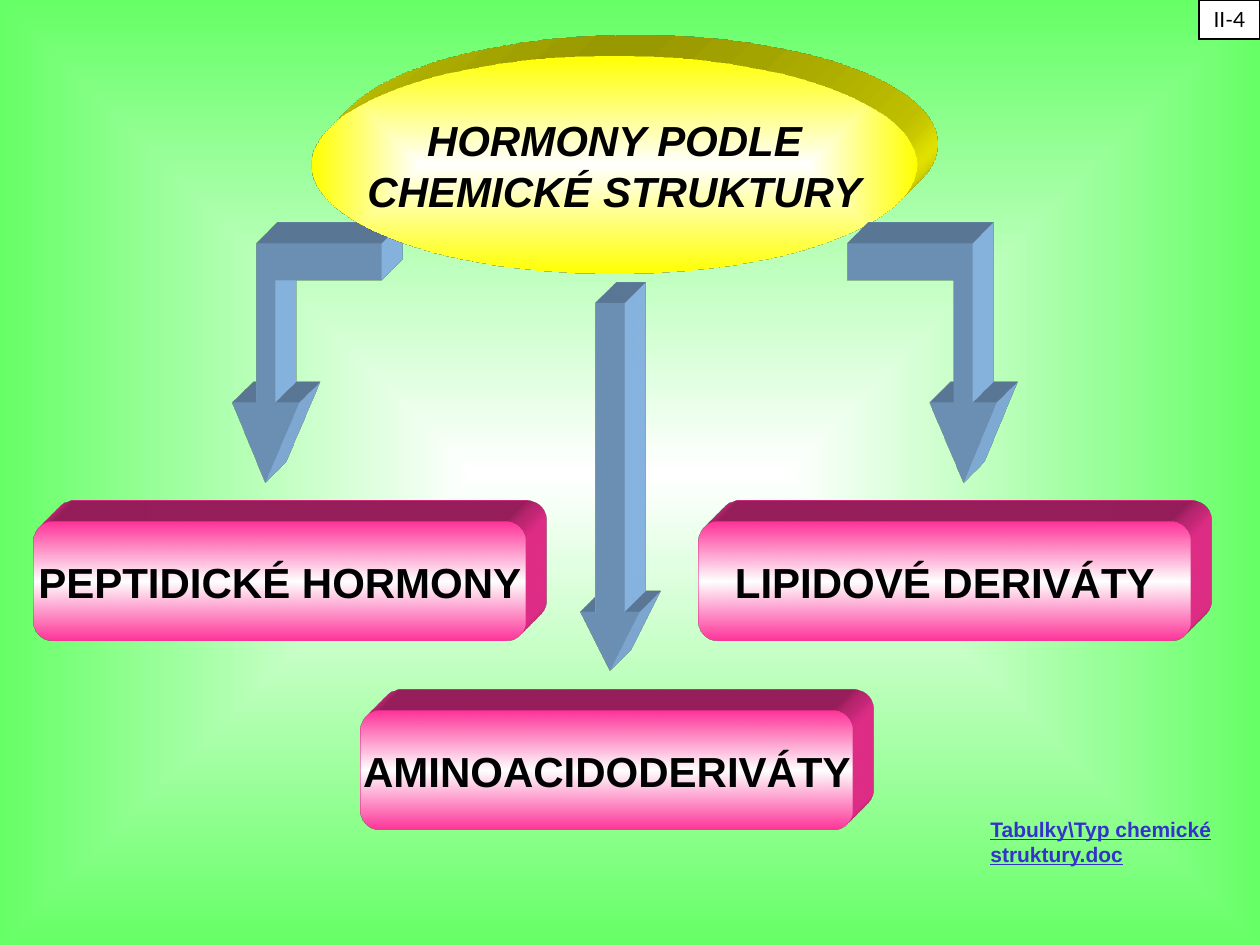
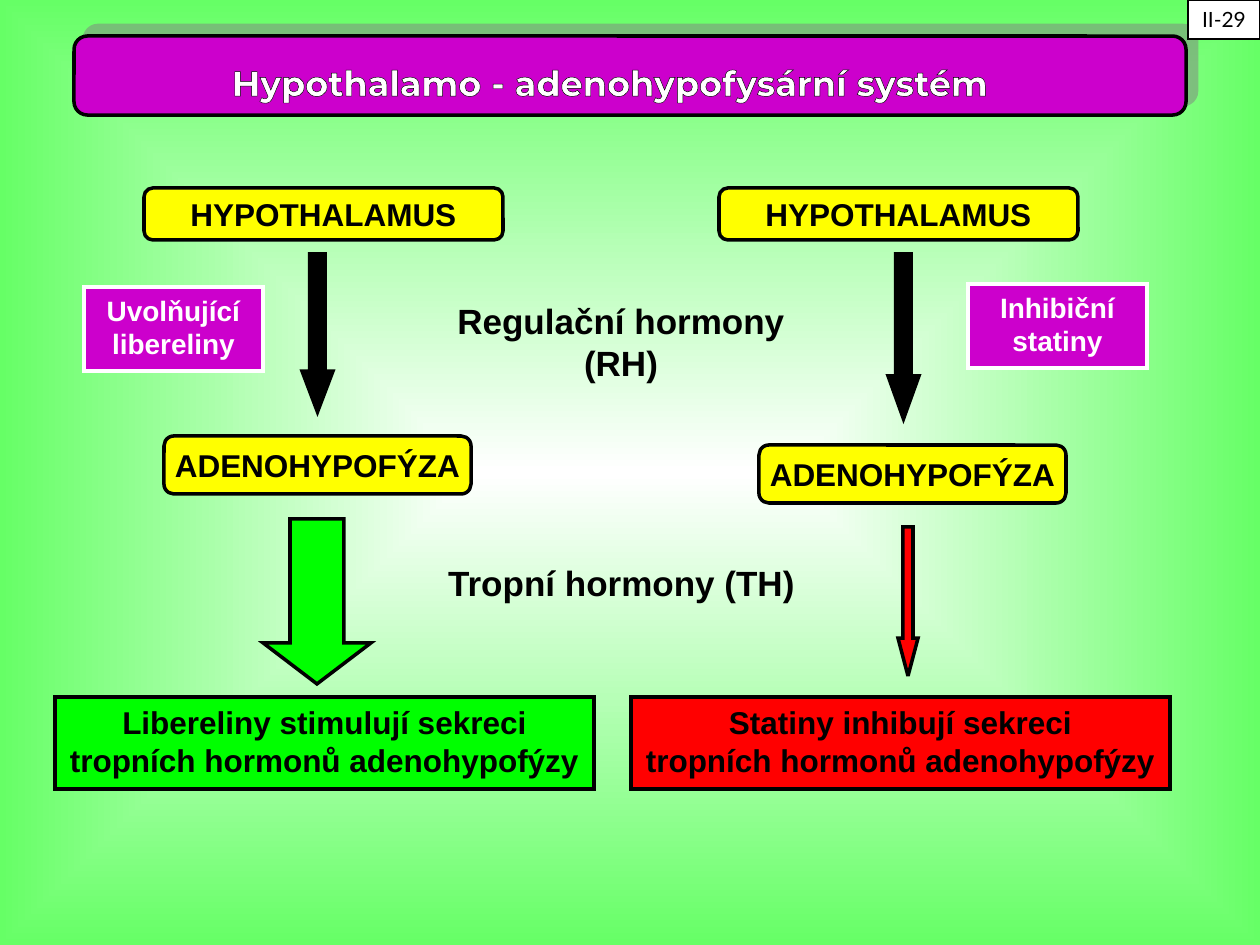
from dataclasses import dataclass
from typing import Optional

from lxml.etree import SubElement
from pptx import Presentation
from pptx.dml.color import RGBColor
from pptx.enum.shapes import MSO_SHAPE
from pptx.enum.text import MSO_ANCHOR, PP_ALIGN
from pptx.oxml import parse_xml
from pptx.oxml.ns import nsdecls, qn
from pptx.util import Emu, Inches, Pt

PX_PER_INCH = 126
SLIDE_W, SLIDE_H = 1260, 945

COLORS = {
    "white": "FFFFFF",
    "black": "000000",
    "meadow": "66FF66",
    "yellow": "FFFF00",
    "pink": "FF3399",
    "sky": "99CCFF",
    "link": "3333CC",
    "purple": "CC00CC",
    "green": "00FF00",
    "red": "FF0000",
    "shadow": "808080",
}


@dataclass(frozen=True)
class Font:
    size: int
    color: str = "black"
    name: str = "Arial"
    bold: bool = True
    italic: bool = False
    underline: bool = False


@dataclass(frozen=True)
class Box:
    """A shape with optional text; kind None means a plain text box."""
    x: int
    y: int
    w: int
    h: int
    kind: Optional[MSO_SHAPE] = None
    fill: Optional[str] = None
    line: Optional[str] = None
    line_pt: float = 2
    adj: tuple[float, ...] = ()
    text: str = ""
    font: Font = Font(18)
    middle: bool = False
    wrap: bool = False
    align: PP_ALIGN = PP_ALIGN.CENTER


def px(n: float) -> Emu:
    return Emu(round(n * Inches(1) / PX_PER_INCH))


def rgb(name: str) -> RGBColor:
    return RGBColor.from_string(COLORS[name])


# --- Fills and effects ---
CENTRE = ('<a:path path="shape"><a:fillToRect l="50000" t="50000" '
          'r="50000" b="50000"/></a:path>')
DOWN = '<a:lin ang="5400000" scaled="1"/>'


def gradient_xml(names: tuple[str, ...], direction: str) -> str:
    step = 100000 // (len(names) - 1)
    stops = "".join(
        f'<a:gs pos="{i * step}"><a:srgbClr val="{COLORS[name]}"/></a:gs>'
        for i, name in enumerate(names))
    return (f'<a:gradFill {nsdecls("a")} rotWithShape="1">'
            f'<a:gsLst>{stops}</a:gsLst>{direction}</a:gradFill>')


def set_gradient(sp, names: tuple[str, ...], direction: str) -> None:
    sp.fill.background()
    spPr = sp.element.spPr
    spPr.replace(spPr.find(qn("a:noFill")),
                 parse_xml(gradient_xml(names, direction)))


def extrude(sp, color: str) -> None:
    spPr = sp.element.spPr
    spPr.append(parse_xml(
        f'<a:scene3d {nsdecls("a")}><a:camera prst="legacyObliqueTopRight"/>'
        '<a:lightRig rig="legacyFlat3" dir="b"/></a:scene3d>'))
    spPr.append(parse_xml(
        f'<a:sp3d {nsdecls("a")} extrusionH="430200" prstMaterial="legacyMatte">'
        '<a:bevelT w="13500" h="13500" prst="angle"/>'
        '<a:bevelB w="13500" h="13500" prst="angle"/>'
        f'<a:extrusionClr><a:srgbClr val="{COLORS[color]}"/></a:extrusionClr>'
        '</a:sp3d>'))


def cast_shadow(sp) -> None:
    effects = sp.element.spPr.find(qn("a:effectLst"))
    effects.append(parse_xml(
        f'<a:outerShdw {nsdecls("a")} dist="{Pt(8.5)}" dir="18900000" '
        f'algn="ctr" rotWithShape="0"><a:srgbClr val="{COLORS["shadow"]}">'
        '<a:alpha val="50000"/></a:srgbClr></a:outerShdw>'))


def outline_text(sp, color: str) -> None:
    for r in sp.element.iter(qn("a:r")):
        r.get_or_add_rPr().insert(0, parse_xml(
            f'<a:ln {nsdecls("a")} w="{Pt(0.75)}"><a:solidFill>'
            f'<a:srgbClr val="{COLORS[color]}"/></a:solidFill></a:ln>'))


# --- Drawing ---
def paint(sp, fill: Optional[str], line: Optional[str], line_pt: float) -> None:
    sp.shadow.inherit = False
    if fill:
        sp.fill.solid()
        sp.fill.fore_color.rgb = rgb(fill)
    if line:
        sp.line.color.rgb = rgb(line)
        sp.line.width = Pt(line_pt)
    else:
        sp.line.fill.background()


def write(sp, box: Box) -> None:
    tf = sp.text_frame
    tf.word_wrap = box.wrap
    tf.vertical_anchor = MSO_ANCHOR.MIDDLE if box.middle else MSO_ANCHOR.TOP
    tf.text = box.text
    for p in tf.paragraphs:
        p.alignment = box.align
        p.font.size = Pt(box.font.size)
        p.font.name = box.font.name
        p.font.bold = box.font.bold
        p.font.italic = box.font.italic
        p.font.underline = box.font.underline
        p.font.color.rgb = rgb(box.font.color)


def draw(s, box: Box):
    frame = [px(n) for n in (box.x, box.y, box.w, box.h)]
    if box.kind is None:
        sp = s.shapes.add_textbox(*frame)
    else:
        sp = s.shapes.add_shape(box.kind, *frame)
        for i, value in enumerate(box.adj):
            sp.adjustments[i] = value
        paint(sp, box.fill, box.line, box.line_pt)
        if box.line and box.kind != MSO_SHAPE.ROUNDED_RECTANGLE:
            ln = sp.element.spPr.find(qn("a:ln"))
            SubElement(ln, qn("a:miter")).set("lim", "800000")
    if box.text:
        write(sp, box)
    return sp


def draw_elbow_arrow(s, points: list[tuple[int, int]]) -> None:
    builder = s.shapes.build_freeform(*points[0], scale=Inches(1) / PX_PER_INCH)
    builder.add_line_segments(points[1:], close=True)
    sp = builder.convert_to_shape()
    paint(sp, "sky", None, 0)
    extrude(sp, "sky")


def new_slide(prs):
    s = prs.slides.add_slide(prs.slide_layouts[6])
    s.element.cSld.insert(0, parse_xml(
        f'<p:bg {nsdecls("p", "a")}><p:bgPr>'
        f'{gradient_xml(("white", "meadow"), CENTRE)}'
        '<a:effectLst/></p:bgPr></p:bg>'))
    return s


def draw_page_tag(s, text: str, w: int) -> None:
    draw(s, Box(SLIDE_W - w, 0, w, 39, MSO_SHAPE.RECTANGLE, "white", "black",
                0.75, text=text, font=Font(12, name="Lato", bold=False),
                middle=True))


# --- Slide 1: hormones by chemical structure ---
LEFT_ELBOW = [(266, 483), (300, 403), (276, 403), (276, 281), (382, 281),
              (382, 244), (257, 244), (257, 403), (233, 403)]
MIRROR_SUM = 1230
HORMONE_CLASSES = [
    (361, 711, "AMINOACIDODERIVÁTY"),
    (699, 522, "LIPIDOVÉ DERIVÁTY"),
    (34, 522, "PEPTIDICKÉ HORMONY"),
]


def build_structure_slide(prs) -> None:
    s = new_slide(prs)
    draw_elbow_arrow(s, LEFT_ELBOW)
    topic = draw(s, Box(312, 56, 605, 218, MSO_SHAPE.OVAL,
                        text="HORMONY PODLE\nCHEMICKÉ STRUKTURY",
                        font=Font(24, italic=True), middle=True))
    set_gradient(topic, ("white", "yellow"), CENTRE)
    extrude(topic, "yellow")

    for x, y, text in HORMONE_CLASSES:
        sp = draw(s, Box(x, y, 492, 119, MSO_SHAPE.FLOWCHART_ALTERNATE_PROCESS,
                         text=text, font=Font(24), middle=True))
        set_gradient(sp, ("pink", "white", "pink"), DOWN)
        extrude(sp, "pink")

    arrow = draw(s, Box(581, 304, 59, 367, MSO_SHAPE.DOWN_ARROW, "sky",
                        adj=(0.5, 1)))
    extrude(arrow, "sky")
    draw_elbow_arrow(s, [(MIRROR_SUM - x, y) for x, y in LEFT_ELBOW])
    draw(s, Box(978, 810, 258, 63, text="Tabulky\\Typ chemické struktury.doc",
                font=Font(12, "link", underline=True), wrap=True,
                align=PP_ALIGN.LEFT))
    draw_page_tag(s, "II-4", 61)


# --- Slide 2: hypothalamus and adenohypophysis ---
@dataclass(frozen=True)
class Pathway:
    hypothalamus_x: int
    pituitary: tuple[int, int]
    release_arrow: tuple[int, int]  # x, height
    release_adj: float
    hormone: tuple[int, int]
    hormone_text: str
    tropic_arrow: tuple[int, int, int, int]
    tropic_adj: float
    effect_x: int
    effect_text: str
    color: str


PATHWAYS = [
    Pathway(144, (164, 436), (302, 158), 1.32, (84, 287),
            "Uvolňující libereliny", (263, 519, 108, 165), 0.38, 55,
            "Libereliny stimulují sekreci\ntropních hormonů adenohypofýzy",
            "green"),
    Pathway(719, (759, 445), (888, 165), 1.39, (968, 284),
            "Inhibiční\nstatiny", (898, 527, 20, 149), 1.89, 631,
            "Statiny inhibují sekreci\ntropních hormonů adenohypofýzy",
            "red"),
]


def draw_gland(s, x: int, y: int, w: int, h: int, text: str) -> None:
    draw(s, Box(x, y, w, h, MSO_SHAPE.ROUNDED_RECTANGLE, "yellow", "black",
                adj=(0.17,), text=text, middle=True))


def draw_pathway(s, path: Pathway) -> None:
    draw_gland(s, path.hypothalamus_x, 188, 359, 52, "HYPOTHALAMUS")
    draw_gland(s, *path.pituitary, 307, 58, "ADENOHYPOFÝZA")
    x, h = path.release_arrow
    draw(s, Box(x, 254, 31, h, MSO_SHAPE.DOWN_ARROW, "black", "black",
                adj=(0.5, path.release_adj)))
    draw(s, Box(*path.hormone, 179, 84, MSO_SHAPE.RECTANGLE, "purple", "white",
                text=path.hormone_text, font=Font(16, "white"), wrap=True))
    draw(s, Box(*path.tropic_arrow, MSO_SHAPE.DOWN_ARROW, path.color, "black",
                adj=(0.5, path.tropic_adj)))
    draw(s, Box(path.effect_x, 697, 539, 92, MSO_SHAPE.RECTANGLE, path.color,
                "black", text=path.effect_text))


def build_system_slide(prs) -> None:
    s = new_slide(prs)
    band = draw(s, Box(74, 36, 1112, 79, MSO_SHAPE.ROUNDED_RECTANGLE,
                       "purple", "black", adj=(0.17,)))
    cast_shadow(band)
    for path in PATHWAYS:
        draw_pathway(s, path)
    draw(s, Box(435, 555, 373, 54, text="Tropní hormony (TH)", font=Font(20)))
    draw(s, Box(411, 293, 420, 97, text="Regulační hormony (RH)",
                font=Font(20), wrap=True))
    title = draw(s, Box(104, 55, 1012, 51,
                        text="Hypothalamo - adenohypofysární systém",
                        font=Font(20, "white", "Montserrat")))
    outline_text(title, "black")
    draw_page_tag(s, "II-29", 72)


def main() -> None:
    prs = Presentation()
    prs.slide_width, prs.slide_height = px(SLIDE_W), px(SLIDE_H)
    build_structure_slide(prs)
    build_system_slide(prs)
    prs.save("out.pptx")


if __name__ == "__main__":
    main()
